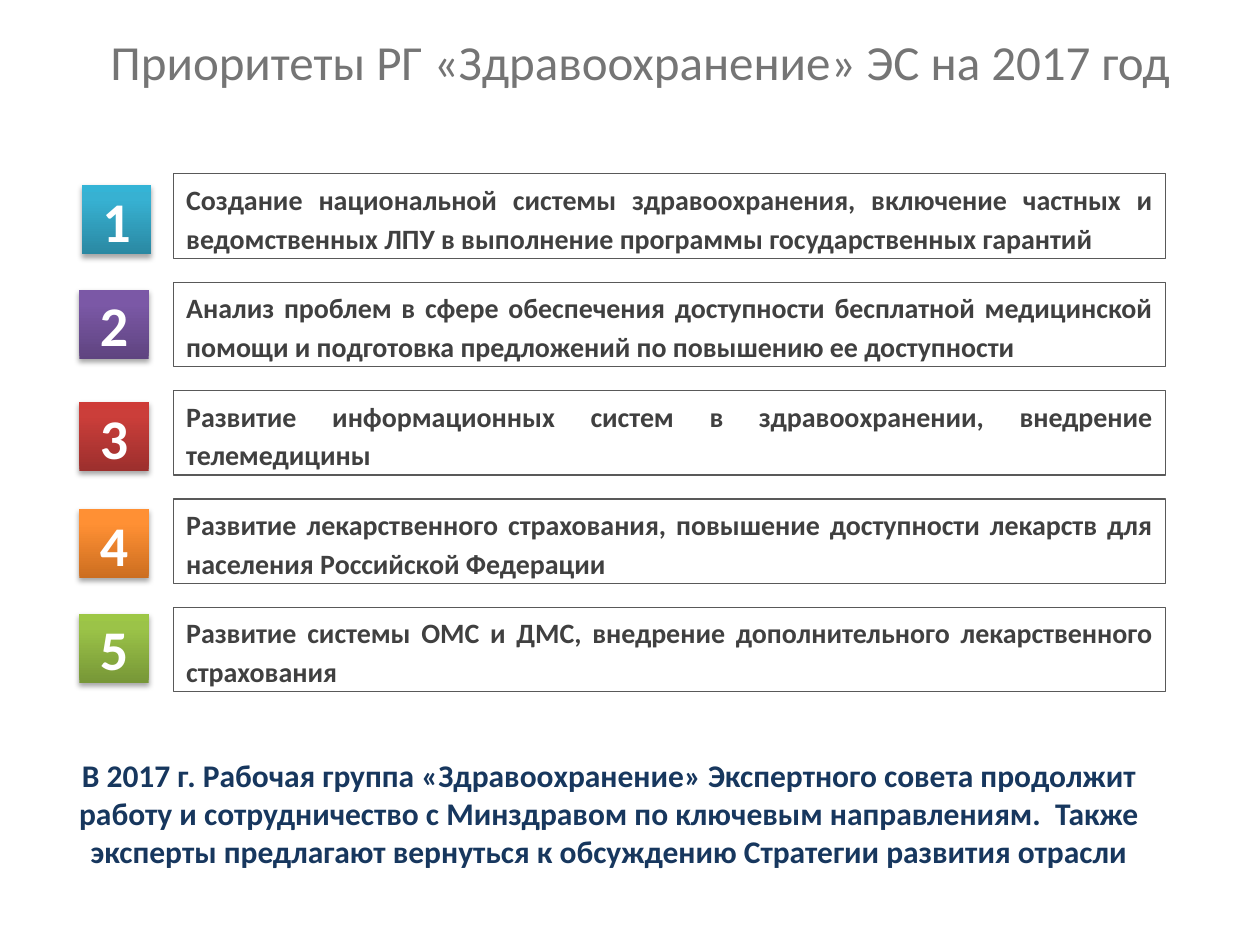
from copy import deepcopy
from dataclasses import dataclass

from lxml import etree
from pptx import Presentation
from pptx.dml.color import RGBColor
from pptx.enum.shapes import MSO_SHAPE
from pptx.enum.text import MSO_ANCHOR, MSO_AUTO_SIZE, PP_ALIGN
from pptx.oxml.ns import qn
from pptx.util import Inches, Pt

RECT = MSO_SHAPE.RECTANGLE
MIDDLE = MSO_ANCHOR.MIDDLE
FIT_SHAPE = MSO_AUTO_SIZE.SHAPE_TO_FIT_TEXT
CENTER, JUSTIFY = PP_ALIGN.CENTER, PP_ALIGN.JUSTIFY
COLS, ROWS = 100, 75


@dataclass(frozen=True)
class Theme:
    font: str = "Calibri"
    title: str = "757575"
    body: str = "404040"
    border: str = "595959"
    note: str = "17375E"
    light: str = "FFFFFF"
    shadow: str = "000000"
    title_size: int = 28
    badge_size: int = 32
    body_size: int = 16
    note_size: int = 18


class SlideBuilder:
    def __init__(self, prs, theme):
        self.theme = theme
        self.s = prs.slides.add_slide(prs.slide_layouts[6])
        self.col = prs.slide_width / COLS
        self.row = prs.slide_height / ROWS

    def place(self, left, top, width, height):
        return (round(left * self.col), round(top * self.row),
                round(width * self.col), round(height * self.row))

    def set_text(self, sp, text, size, color, align, bold=True):
        tf = sp.text_frame
        tf.word_wrap = True
        p = tf.paragraphs[0]
        p.text = text
        p.alignment = align
        p.font.name = self.theme.font
        p.font.size = Pt(size)
        p.font.bold = bold
        p.font.color.rgb = RGBColor.from_string(color)
        return p

    def text(self, box, text, size, color, bold=True):
        sp = self.s.shapes.add_textbox(*self.place(*box))
        p = self.set_text(sp, text, size, color, CENTER, bold)
        sp.text_frame.auto_size = FIT_SHAPE
        return p

    def rect(self, box):
        sp = self.s.shapes.add_shape(RECT, *self.place(*box))
        sp.shadow.inherit = False
        sp.text_frame.vertical_anchor = MIDDLE
        return sp

    def badge(self, box, text, colors):
        sp = self.rect(box)
        sp.line.fill.background()
        self.gradient(sp, colors)
        self.drop_shadow(sp)
        self.set_text(sp, text, self.theme.badge_size, self.theme.light, CENTER)

    def gradient(self, sp, colors):
        sp.fill.gradient()
        sp.fill.gradient_angle = 90
        stops = sp._element.spPr.find(".//" + qn("a:gsLst"))
        stops.append(deepcopy(stops[0]))
        for stop, position, color in zip(sp.fill.gradient_stops, (0, 0.8, 1), colors):
            stop.position = position
            stop.color.rgb = RGBColor.from_string(color)

    def drop_shadow(self, sp):
        effects = sp._element.spPr.find(qn("a:effectLst"))
        shadow = etree.SubElement(effects, qn("a:outerShdw"), blurRad=str(int(Pt(3.1))),
                                  dist=str(int(Pt(1.8))), dir="5400000", rotWithShape="0")
        color = etree.SubElement(shadow, qn("a:srgbClr"), val=self.theme.shadow)
        etree.SubElement(color, qn("a:alpha"), val="35000")

    def card(self, box, text):
        sp = self.rect(box)
        sp.fill.background()
        sp.line.color.rgb = RGBColor.from_string(self.theme.border)
        sp.line.width = Pt(0.75)
        p = self.set_text(sp, text, self.theme.body_size, self.theme.body, JUSTIFY)
        p.line_spacing = 1.15


PRIORITIES = [
    (6.5, 14.7, ("2A88A2", "37B1D2", "34B4D6"),
     "Создание национальной системы здравоохранения, включение частных и "
     "ведомственных ЛПУ в выполнение программы государственных гарантий"),
    (6.3, 23, ("5F4480", "7B58A6", "7C57A8"),
     "Анализ проблем в сфере обеспечения доступности бесплатной медицинской "
     "помощи и подготовка предложений по повышению ее доступности"),
    (6.3, 31.9, ("9C2F2D", "CB3E3A", "CE3B37"),
     "Развитие информационных систем в здравоохранении, внедрение телемедицины"),
    (6.3, 40.4, ("CC6E20", "FF9034", "FF9136"),
     "Развитие лекарственного страхования, повышение доступности лекарств для "
     "населения Российской Федерации"),
    (6.3, 48.7, ("779737", "9BC348", "9DC746"),
     "Развитие системы ОМС и ДМС, внедрение дополнительного лекарственного "
     "страхования"),
]
CARD_TOP, CARD_STEP = 13.8, 8.6


def main():
    prs = Presentation()
    prs.slide_width, prs.slide_height = Inches(10), Inches(7.5)
    theme = Theme()
    slide = SlideBuilder(prs, theme)

    slide.text((1.6, 2, 98.4, 5.7), "Приоритеты РГ «Здравоохранение» ЭС на 2017 год",
               theme.title_size, theme.title, bold=False)
    for i, (left, top, colors, text) in enumerate(PRIORITIES):
        slide.badge((left, top, 5.5, 5.5), str(i + 1), colors)
        slide.card((13.8, CARD_TOP + i * CARD_STEP, 78.7, 6.7), text)
    note = slide.text((4.2, 59.5, 88.3, 10.1),
                      "В 2017 г. Рабочая группа «Здравоохранение» Экспертного совета "
                      "продолжит работу и сотрудничество с Минздравом по ключевым "
                      "направлениям.  Также эксперты предлагают вернуться к обсуждению "
                      "Стратегии развития отрасли",
                      theme.note_size, theme.note)
    note.space_before = Pt(12)

    prs.save("out.pptx")


if __name__ == "__main__":
    main()
